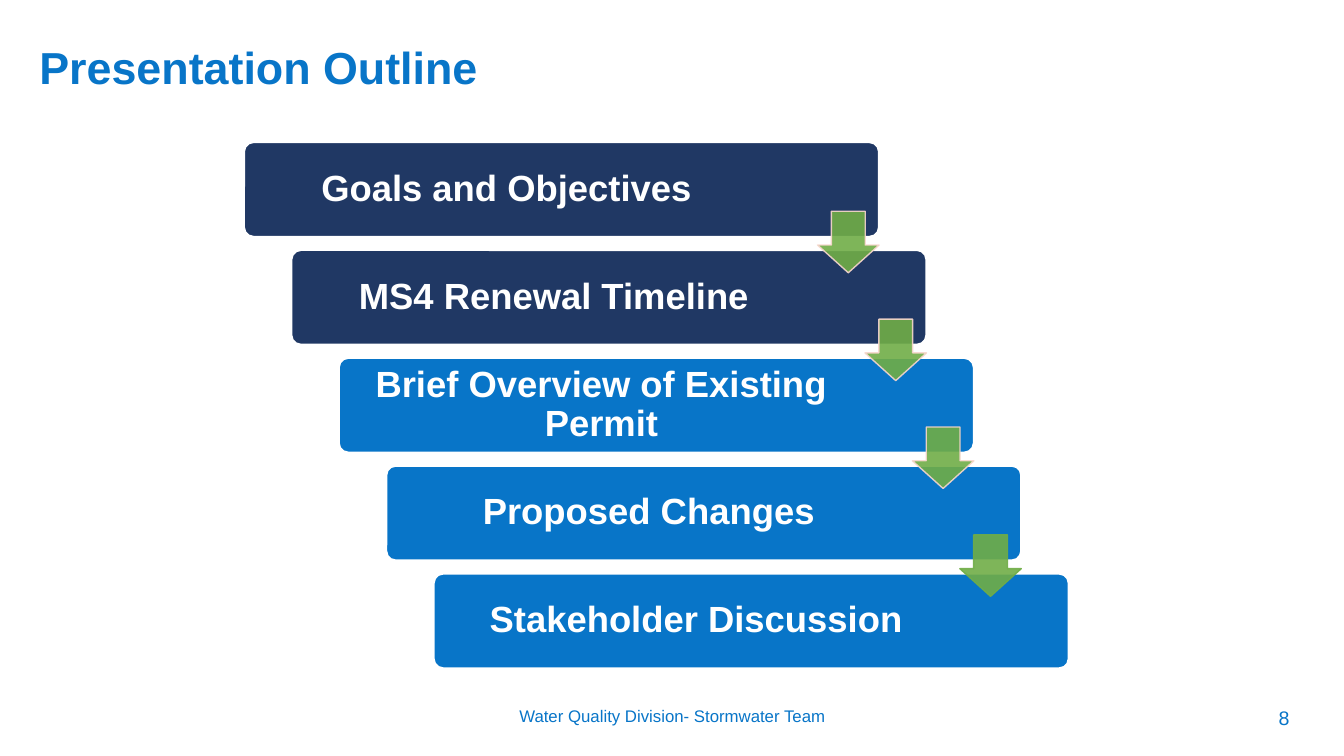
from dataclasses import dataclass

from lxml.etree import SubElement
from pptx import Presentation
from pptx.dml.color import RGBColor as RGB
from pptx.enum.shapes import MSO_SHAPE as Shape
from pptx.enum.text import MSO_ANCHOR as Anchor, MSO_AUTO_SIZE as AutoSize, PP_ALIGN as Align
from pptx.oxml.ns import qn
from pptx.util import Inches, Pt


@dataclass(frozen=True)
class Theme:
    font: str = "Arial"
    blue: RGB = RGB(0x08, 0x75, 0xC8)
    navy: RGB = RGB(0x20, 0x38, 0x64)
    green: RGB = RGB(0x70, 0xAD, 0x47)
    blush: RGB = RGB(0xF8, 0xD7, 0xCE)
    white: RGB = RGB(0xFF, 0xFF, 0xFF)
    title: int = 32
    step: int = 26
    number: int = 14
    footer: int = 12


THEME = Theme()
SLIDE_W, SLIDE_H = 13.33, 7.5
STEPS = [
    ("Goals and Objectives", THEME.navy),
    ("MS4 Renewal Timeline", THEME.navy),
    ("Brief Overview of Existing Permit", THEME.blue),
    ("Proposed Changes", THEME.blue),
    ("Stakeholder Discussion", THEME.blue),
]
ARROW_LINES = [THEME.blush, THEME.blush, THEME.blush, THEME.green]


def inches(box):
    return [Inches(v) for v in box]


def write(tf, text, size, color, bold=False, align=Align.CENTER, anchor=Anchor.TOP, spacing=None):
    tf.word_wrap = True
    tf.auto_size = AutoSize.NONE
    tf.vertical_anchor = anchor
    p = tf.paragraphs[0]
    p.alignment = align
    p.line_spacing = spacing
    r = p.add_run()
    r.text = text
    r.font.name, r.font.size, r.font.bold = THEME.font, Pt(size), bold
    r.font.color.rgb = color


def add_preset(s, kind, box, fill, line, width):
    sp = s.shapes.add_shape(kind, *inches(box))
    sp.shadow.inherit = False
    sp.fill.solid()
    sp.fill.fore_color.rgb = fill
    sp.line.color.rgb = line
    sp.line.width = Pt(width)
    return sp


def add_title(s, box, text):
    sp = s.shapes.title
    sp.left, sp.top, sp.width, sp.height = inches(box)
    write(sp.text_frame, text, THEME.title, THEME.blue, True, Align.LEFT, spacing=0.9)


def add_label(s, box, text, size):
    write(s.shapes.add_textbox(*inches(box)).text_frame, text, size, THEME.blue)


def add_step(s, box, text, fill):
    sp = add_preset(s, Shape.ROUNDED_RECTANGLE, box, fill, THEME.white, 1.5)
    sp.adjustments[0] = 0.1
    tf = sp.text_frame
    tf.margin_left = tf.margin_top = tf.margin_bottom = Inches(0.11)
    tf.margin_right = Inches(box[2] * 0.19)  # keeps the text clear of the arrow
    write(tf, text, THEME.step, THEME.white, True, anchor=Anchor.MIDDLE, spacing=0.9)


def add_arrow(s, box, line):
    sp = add_preset(s, Shape.DOWN_ARROW, box, THEME.green, line, 1)
    sp.adjustments[0], sp.adjustments[1] = 0.55, 0.45
    for color in sp.element.spPr.iter(qn("a:srgbClr")):
        SubElement(color, qn("a:alpha"), val="90000")


def add_staircase(s, box):
    """Steps descend to the right across the box, with an arrow at each join."""
    left, top, width, height = box
    step_w, step_h, arrow = width * 0.77, height * 0.18, 0.61
    gaps = len(STEPS) - 1
    dx, dy = (width - step_w) / gaps, (height - step_h) / gaps
    for i, (text, fill) in enumerate(STEPS):
        add_step(s, (left + i * dx, top + i * dy, step_w, step_h), text, fill)
    for i, line in enumerate(ARROW_LINES):
        x = left + i * dx + step_w - arrow
        y = top + i * dy + step_h * 0.73
        add_arrow(s, (x, y, arrow, arrow), line)


def add_footer(s, box):
    left, top, width, height = box
    add_label(s, (left, top, 4.5, height), "Water Quality Division- Stormwater Team", THEME.footer)
    add_label(s, (left + width - 0.89, top, 0.89, height), "8", THEME.number)


def main():
    prs = Presentation()
    prs.slide_width, prs.slide_height = Inches(SLIDE_W), Inches(SLIDE_H)
    s = prs.slides.add_slide(prs.slide_layouts[5])
    add_title(s, (0.29, 0.4, 12.43, 0.68), "Presentation Outline")
    add_footer(s, (4.42, 6.95, 8.76, 0.4))
    add_staircase(s, (2.42, 1.41, 8.18, 5.22))
    prs.save("out.pptx")


if __name__ == "__main__":
    main()
